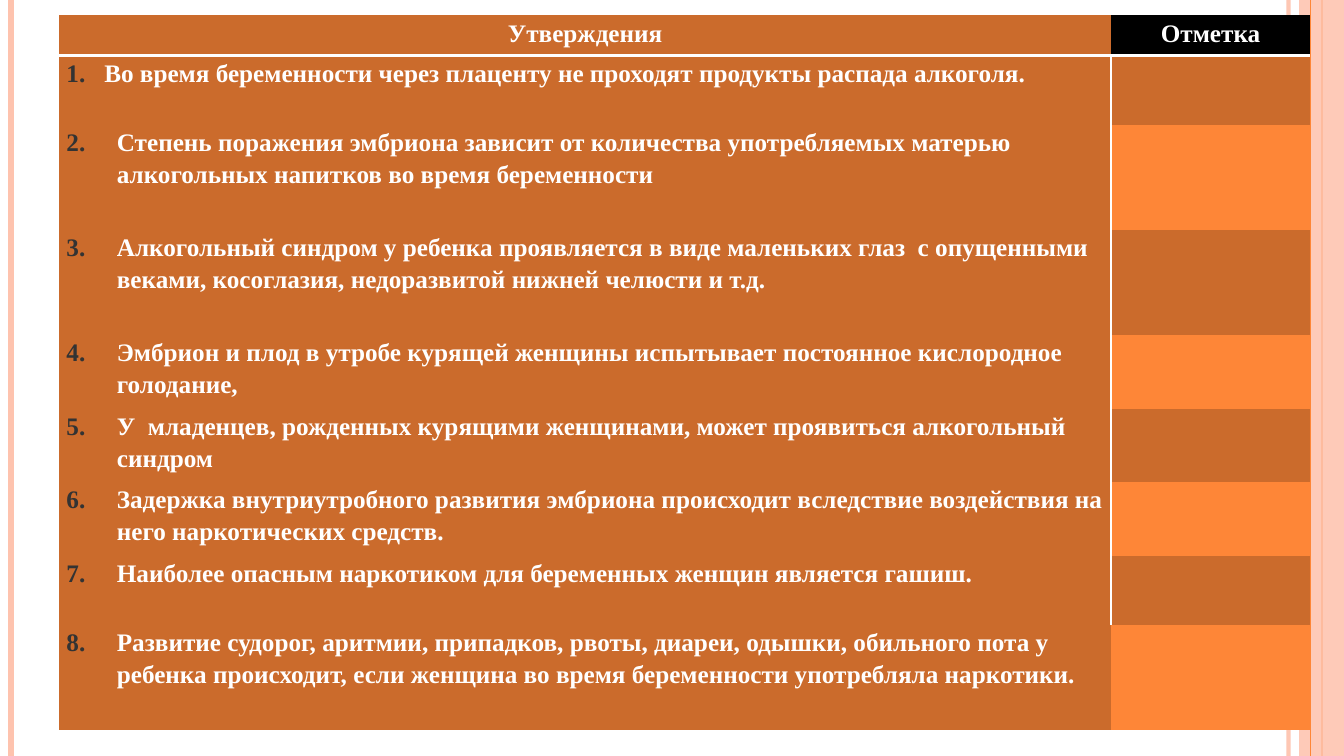
from lxml.etree import SubElement
from pptx import Presentation
from pptx.dml.color import RGBColor
from pptx.enum.shapes import MSO_CONNECTOR, MSO_SHAPE
from pptx.enum.text import PP_ALIGN
from pptx.oxml import parse_xml
from pptx.oxml.ns import nsdecls, qn
from pptx.util import Pt

SLIDE_WIDTH, SLIDE_HEIGHT = 960, 540
NO_STYLE = "{2D5ABB26-0587-4C30-8999-92F81FD0307C}"
PEACH, ORANGE, BROWN, WHITE, BLACK = "FEC3AE", "FE8637", "CB6B2C", "FFFFFF", "000000"
NUMBER_COLOR = "333333"

HEADINGS = [("Утверждения", BROWN), ("Отметка", BLACK)]
COLUMN_WIDTHS = [751, 142.5]
HEADER_HEIGHT = 28.8
SHORT, MIDDLE, TALL = 49.5, 52.6, 75
STATEMENTS = [
    ("Во время беременности через плаценту не проходят продукты распада алкоголя.", SHORT),
    ("Степень поражения эмбриона зависит от количества употребляемых матерью "
     "алкогольных напитков во время беременности", TALL),
    ("Алкогольный синдром у ребенка проявляется в виде маленьких глаз  с опущенными "
     "веками, косоглазия, недоразвитой нижней челюсти и т.д.", TALL),
    ("Эмбрион и плод в утробе курящей женщины испытывает постоянное кислородное "
     "голодание,", MIDDLE),
    ("У  младенцев, рожденных курящими женщинами, может проявиться алкогольный "
     "синдром", MIDDLE),
    ("Задержка внутриутробного развития эмбриона происходит вследствие воздействия на "
     "него наркотических средств.", MIDDLE),
    ("Наиболее опасным наркотиком для беременных женщин является гашиш.", SHORT),
    ("Развитие судорог, аритмии, припадков, рвоты, диареи, одышки, обильного пота у "
     "ребенка происходит, если женщина во время беременности употребляла наркотики.", TALL),
]


def paint(color_format, color):
    color_format.rgb = RGBColor.from_string(color)


def fill_solid(part, color):
    part.fill.solid()
    paint(part.fill.fore_color, color)


def set_opacity(shape, percent):
    color = next(shape._element.spPr.iter(qn("a:srgbClr")))
    SubElement(color, qn("a:alpha"), val=str(percent * 1000))


def add_stripe(slide, x, height, color, width):
    stripe = slide.shapes.add_connector(MSO_CONNECTOR.STRAIGHT, Pt(x), 0, Pt(x), Pt(height))
    paint(stripe.line.color, color)
    stripe.line.width = Pt(width)
    SubElement(stripe._element.spPr, qn("a:effectLst"))
    return stripe


def add_side_decoration(slide, width, height):
    """Vertical stripes along both edges and the pale band on the right."""
    set_opacity(add_stripe(slide, width - 39.6, height, PEACH, 3), 93)
    add_stripe(slide, 8, height, PEACH, 4.5)
    add_stripe(slide, width - 16, height, ORANGE, 1.5)
    band = slide.shapes.add_shape(MSO_SHAPE.RECTANGLE, Pt(width - 32), 0, Pt(32), Pt(height))
    band.shadow.inherit = False
    fill_solid(band, PEACH)
    band.line.fill.background()
    set_opacity(band, 87)
    add_stripe(slide, width - 24, height, ORANGE, 0.75)


def add_border(cell, side):
    """White rule on one side of a cell: lnR or lnB."""
    cell._tc.get_or_add_tcPr().insert(0, parse_xml(
        f'<a:{side} {nsdecls("a")} w="{Pt(2)}"><a:solidFill>'
        f'<a:srgbClr val="{WHITE}"/></a:solidFill></a:{side}>'))


def write_cell(cell, text):
    cell.margin_left = cell.margin_right = Pt(5)
    cell.margin_top = cell.margin_bottom = 0
    cell.text_frame.text = text
    paragraph = cell.text_frame.paragraphs[0]
    paragraph.line_spacing = 1.15
    font = paragraph.runs[0].font
    font.name, font.size, font.bold = "Times New Roman", Pt(18), True
    paint(font.color, WHITE)
    return paragraph


def number_paragraph(paragraph, number, indent):
    properties = paragraph._p.get_or_add_pPr()
    properties.set("marL", str(Pt(indent)))
    properties.set("indent", str(-Pt(indent)))
    bullet_color = SubElement(properties, qn("a:buClr"))
    SubElement(bullet_color, qn("a:srgbClr"), val=NUMBER_COLOR)
    SubElement(properties, qn("a:buFont"), typeface="Times New Roman")
    SubElement(properties, qn("a:buAutoNum"), type="arabicPeriod", startAt=str(number))


def add_statement_table(slide, left, top):
    heights = [HEADER_HEIGHT] + [height for _, height in STATEMENTS]
    table = slide.shapes.add_table(
        len(heights), len(COLUMN_WIDTHS), Pt(left), Pt(top),
        Pt(sum(COLUMN_WIDTHS)), Pt(sum(heights))).table
    table._tbl.tblPr.find(qn("a:tableStyleId")).text = NO_STYLE
    for column, width in zip(table.columns, COLUMN_WIDTHS):
        column.width = Pt(width)
    for row, height in zip(table.rows, heights):
        row.height = Pt(height)

    for column, (heading, color) in enumerate(HEADINGS):
        cell = table.cell(0, column)
        write_cell(cell, heading).alignment = PP_ALIGN.CENTER
        fill_solid(cell, color)
        add_border(cell, "lnB")

    for number, (statement, _) in enumerate(STATEMENTS, start=1):
        cell, mark = table.cell(number, 0), table.cell(number, 1)
        number_paragraph(write_cell(cell, statement), number, 27 if number == 1 else 36)
        fill_solid(cell, BROWN)
        fill_solid(mark, BROWN if number % 2 else ORANGE)
        if number < len(STATEMENTS):
            add_border(cell, "lnR")


def main():
    presentation = Presentation()
    presentation.slide_width, presentation.slide_height = Pt(SLIDE_WIDTH), Pt(SLIDE_HEIGHT)
    slide = presentation.slides.add_slide(presentation.slide_layouts[6])
    add_side_decoration(slide, SLIDE_WIDTH, SLIDE_HEIGHT)
    add_statement_table(slide, 42.5, 11)
    presentation.save("out.pptx")


if __name__ == "__main__":
    main()
